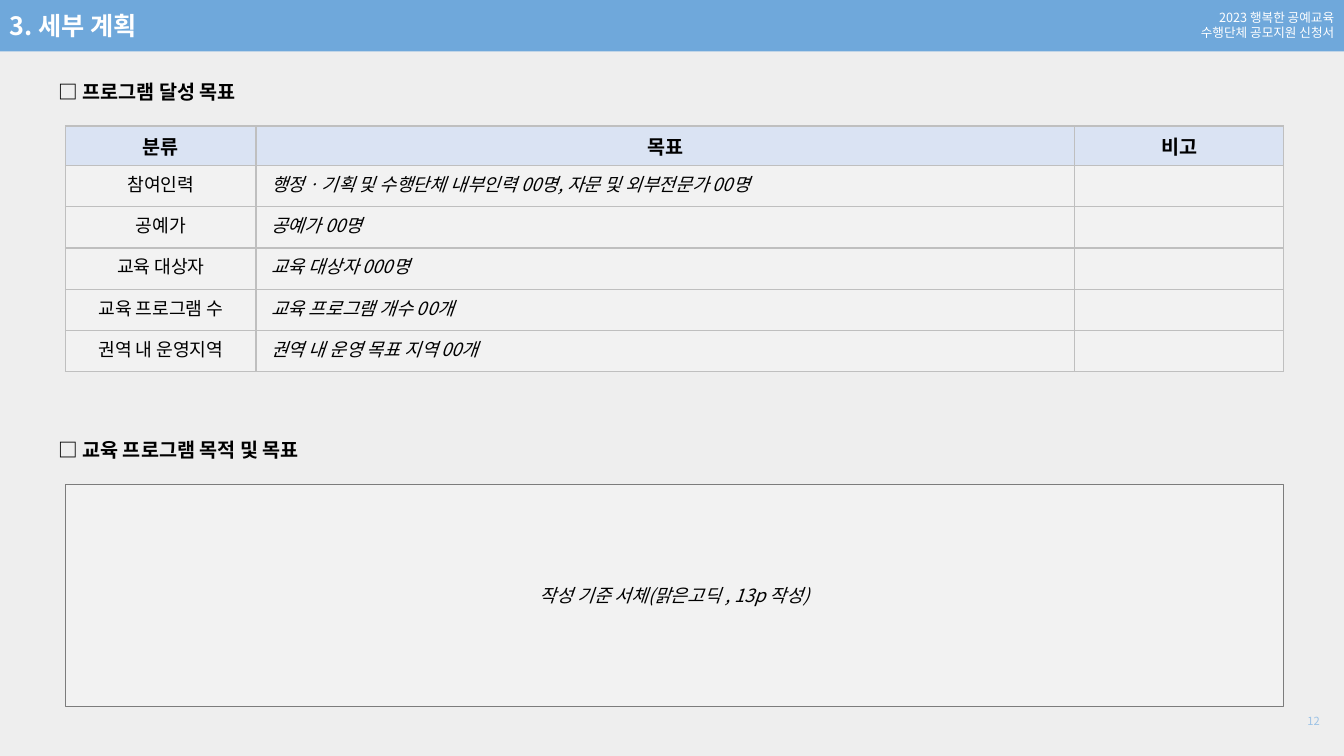
from dataclasses import dataclass

import lxml.etree
import pptx
import pptx.dml.color
import pptx.enum.shapes
import pptx.enum.text
import pptx.oxml.ns
import pptx.presentation
import pptx.shapes.autoshape
import pptx.slide
import pptx.table
import pptx.text.text
import pptx.util

Inches = pptx.util.Inches
ALIGN = pptx.enum.text.PP_ALIGN
ANCHOR = pptx.enum.text.MSO_ANCHOR


@dataclass(frozen=True)
class Theme:
    font: str = "Noto Sans CJK KR"
    table_head_font: str = "Arial"
    background: str = "EEEEEE"
    band: str = "6FA8DB"
    head_fill: str = "DAE3F3"
    panel: str = "F2F2F2"
    grid: str = "BFBFBF"
    frame: str = "7C7C7C"
    ink: str = "000000"
    white: str = "FFFFFF"
    page_number: str = "9DC3E6"
    title_size: float = 18
    heading_size: float = 14
    body_size: float = 13
    band_size: float = 9
    page_size: float = 8
    rule_width: float = 1


THEME = Theme()


@dataclass(frozen=True)
class Style:
    size: float
    color: str = THEME.ink
    bold: bool = False
    italic: bool = False
    align: ALIGN = ALIGN.LEFT
    font: str = THEME.font


@dataclass(frozen=True)
class Box:
    left: float
    top: float
    width: float
    height: float

    def emu(self) -> tuple[int, ...]:
        return tuple(Inches(n) for n in (self.left, self.top, self.width, self.height))


@dataclass(frozen=True)
class Label:
    text: str
    box: Box
    style: Style
    anchor: ANCHOR = ANCHOR.TOP
    wrap: bool = True


@dataclass(frozen=True)
class Goal:
    category: str
    target: str


HEADING = Style(THEME.heading_size, bold=True)
TABLE_HEAD = Style(THEME.heading_size, bold=True, align=ALIGN.CENTER, font=THEME.table_head_font)
CATEGORY = Style(THEME.body_size, align=ALIGN.CENTER)
TARGET = Style(THEME.body_size, italic=True)
GUIDE = Style(THEME.body_size, italic=True, align=ALIGN.CENTER)
BAND = Style(THEME.band_size, THEME.white, align=ALIGN.RIGHT)
PAGE = Style(THEME.page_size, THEME.page_number, align=ALIGN.RIGHT)
TITLE = Style(THEME.title_size, THEME.white, bold=True)

BAND_LINES = ["2023 행복한 공예교육", "수행단체 공모지원 신청서"]
LABELS = [
    Label("□ 프로그램 달성 목표", Box(0.48, 0.74, 11.9, 0.34), HEADING),
    Label("□ 교육 프로그램 목적 및 목표", Box(0.48, 4.3, 11.9, 0.34), HEADING),
    Label("12", Box(12.73, 6.95, 0.46, 0.4), PAGE, ANCHOR.MIDDLE),
    Label("3. 세부 계획", Box(0, 0.05, 1.6, 0.4), TITLE, wrap=False),
]
COLUMNS = {"분류": 1.89, "목표": 8.12, "비고": 2.07}
GOALS = [
    Goal("참여인력", "행정ㆍ기획 및 수행단체 내부인력 00명, 자문 및 외부전문가 00명"),
    Goal("공예가", "공예가 00명"),
    Goal("교육 대상자", "교육 대상자 000명"),
    Goal("교육 프로그램 수", "교육 프로그램 개수 00개"),
    Goal("권역 내 운영지역", "권역 내 운영 목표 지역 00개"),
]
HEAD_HEIGHT, ROW_HEIGHT = 0.39, 0.41
TARGET_INSET = 0.15


def rgb(color: str) -> pptx.dml.color.RGBColor:
    return pptx.dml.color.RGBColor.from_string(color)


def add_text(paragraph: pptx.text.text._Paragraph, text: str, style: Style) -> None:
    paragraph.alignment = style.align
    run = paragraph.add_run()
    run.text = text
    font = run.font
    font.name, font.size = style.font, pptx.util.Pt(style.size)
    font.bold, font.italic = style.bold, style.italic
    font.color.rgb = rgb(style.color)
    east_asian = lxml.etree.SubElement(run._r.get_or_add_rPr(), pptx.oxml.ns.qn("a:ea"))
    east_asian.set("typeface", THEME.font)


def add_label(slide: pptx.slide.Slide, label: Label) -> None:
    frame = slide.shapes.add_textbox(*label.box.emu()).text_frame
    frame.word_wrap = label.wrap
    frame.vertical_anchor = label.anchor
    add_text(frame.paragraphs[0], label.text, label.style)


def add_panel(slide: pptx.slide.Slide, box: Box, fill: str) -> pptx.shapes.autoshape.Shape:
    panel = slide.shapes.add_shape(pptx.enum.shapes.MSO_SHAPE.RECTANGLE, *box.emu())
    panel.shadow.inherit = False
    panel.fill.solid()
    panel.fill.fore_color.rgb = rgb(fill)
    panel.line.fill.background()
    panel.text_frame.word_wrap = True
    return panel


def add_band(slide: pptx.slide.Slide) -> None:
    frame = add_panel(slide, Box(0, 0, 13.33, 0.51), THEME.band).text_frame
    frame.vertical_anchor = ANCHOR.TOP
    frame.margin_top = Inches(0.1)
    for index, line in enumerate(BAND_LINES):
        paragraph = frame.add_paragraph() if index else frame.paragraphs[0]
        add_text(paragraph, line, BAND)


def add_guide(slide: pptx.slide.Slide) -> None:
    guide = add_panel(slide, Box(0.65, 4.81, 12.08, 2.2), THEME.panel)
    guide.line.color.rgb = rgb(THEME.frame)
    guide.line.width = pptx.util.Pt(THEME.rule_width)
    guide.text_frame.vertical_anchor = ANCHOR.MIDDLE
    add_text(guide.text_frame.paragraphs[0], "작성 기준 서체(맑은고딕 , 13p 작성)", GUIDE)


def paint_cell(cell: pptx.table._Cell, fill: str) -> None:
    """Draw the four borders and the fill, in the order the schema wants."""
    properties = cell._tc.get_or_add_tcPr()
    for side in ("a:lnL", "a:lnR", "a:lnT", "a:lnB"):
        border = lxml.etree.SubElement(properties, pptx.oxml.ns.qn(side))
        border.set("w", str(pptx.util.Pt(THEME.rule_width)))
        solid = lxml.etree.SubElement(border, pptx.oxml.ns.qn("a:solidFill"))
        lxml.etree.SubElement(solid, pptx.oxml.ns.qn("a:srgbClr")).set("val", THEME.grid)
    cell.fill.solid()
    cell.fill.fore_color.rgb = rgb(fill)


def add_goal_table(slide: pptx.slide.Slide) -> None:
    heights = [HEAD_HEIGHT] + [ROW_HEIGHT] * len(GOALS)
    box = Box(0.65, 1.25, sum(COLUMNS.values()), sum(heights))
    table = slide.shapes.add_table(len(heights), len(COLUMNS), *box.emu()).table
    for column, width in zip(table.columns, COLUMNS.values()):
        column.width = Inches(width)
    for row, height in zip(table.rows, heights):
        row.height = Inches(height)
    for cell, heading in zip(table.rows[0].cells, COLUMNS):
        paint_cell(cell, THEME.head_fill)
        cell.vertical_anchor = ANCHOR.MIDDLE
        add_text(cell.text_frame.paragraphs[0], heading, TABLE_HEAD)
    for number, goal in enumerate(GOALS, start=1):
        category, target, remark = table.rows[number].cells
        for cell in (category, target, remark):
            paint_cell(cell, THEME.panel)
        target.margin_left = Inches(TARGET_INSET)
        add_text(category.text_frame.paragraphs[0], goal.category, CATEGORY)
        add_text(target.text_frame.paragraphs[0], goal.target, TARGET)


def main() -> None:
    deck = pptx.Presentation()
    deck.slide_width, deck.slide_height = Inches(13.33), Inches(7.5)
    slide = deck.slides.add_slide(deck.slide_layouts[6])
    slide.background.fill.solid()
    slide.background.fill.fore_color.rgb = rgb(THEME.background)
    add_band(slide)
    add_goal_table(slide)
    add_guide(slide)
    for label in LABELS:
        add_label(slide, label)
    deck.save("out.pptx")


if __name__ == "__main__":
    main()
